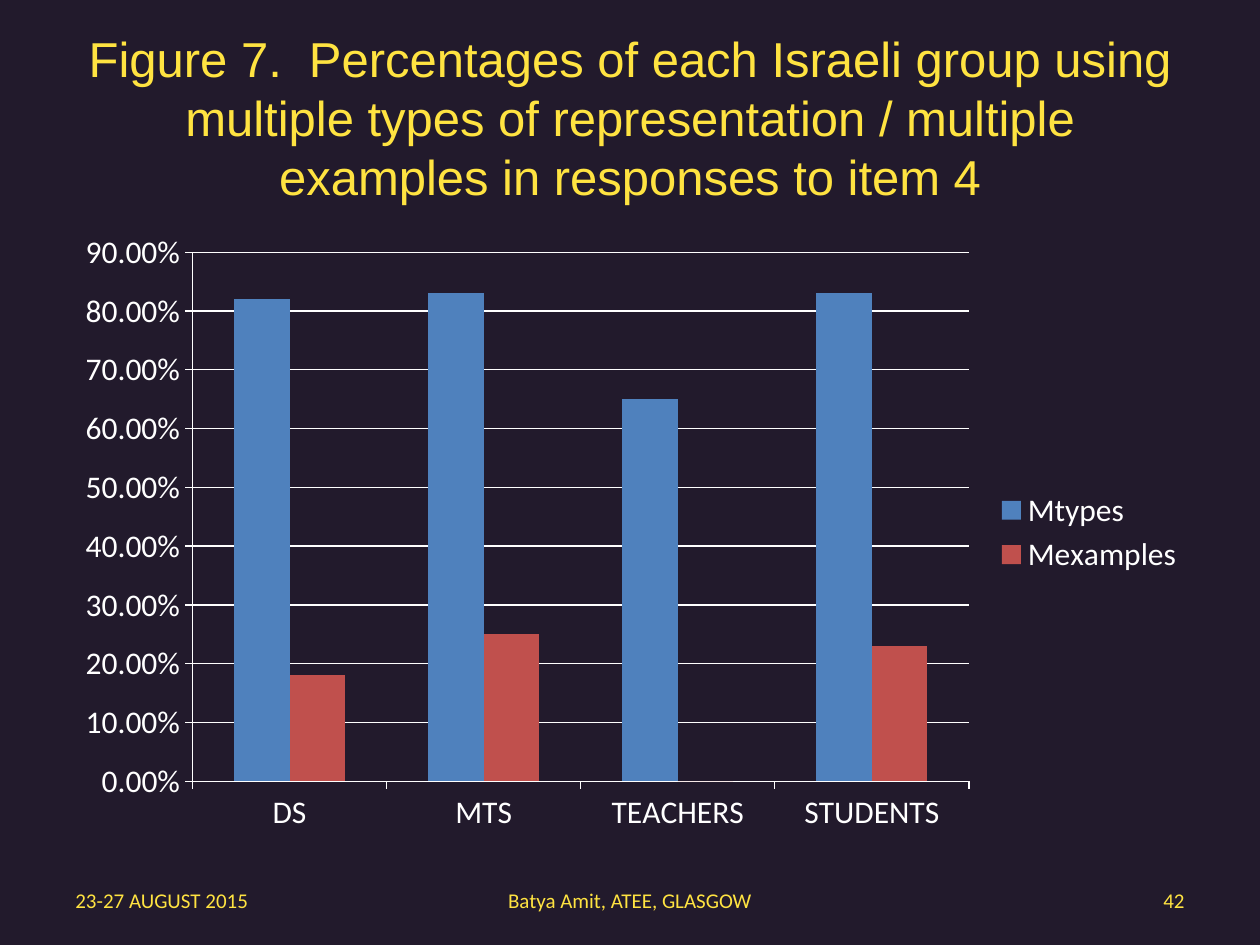
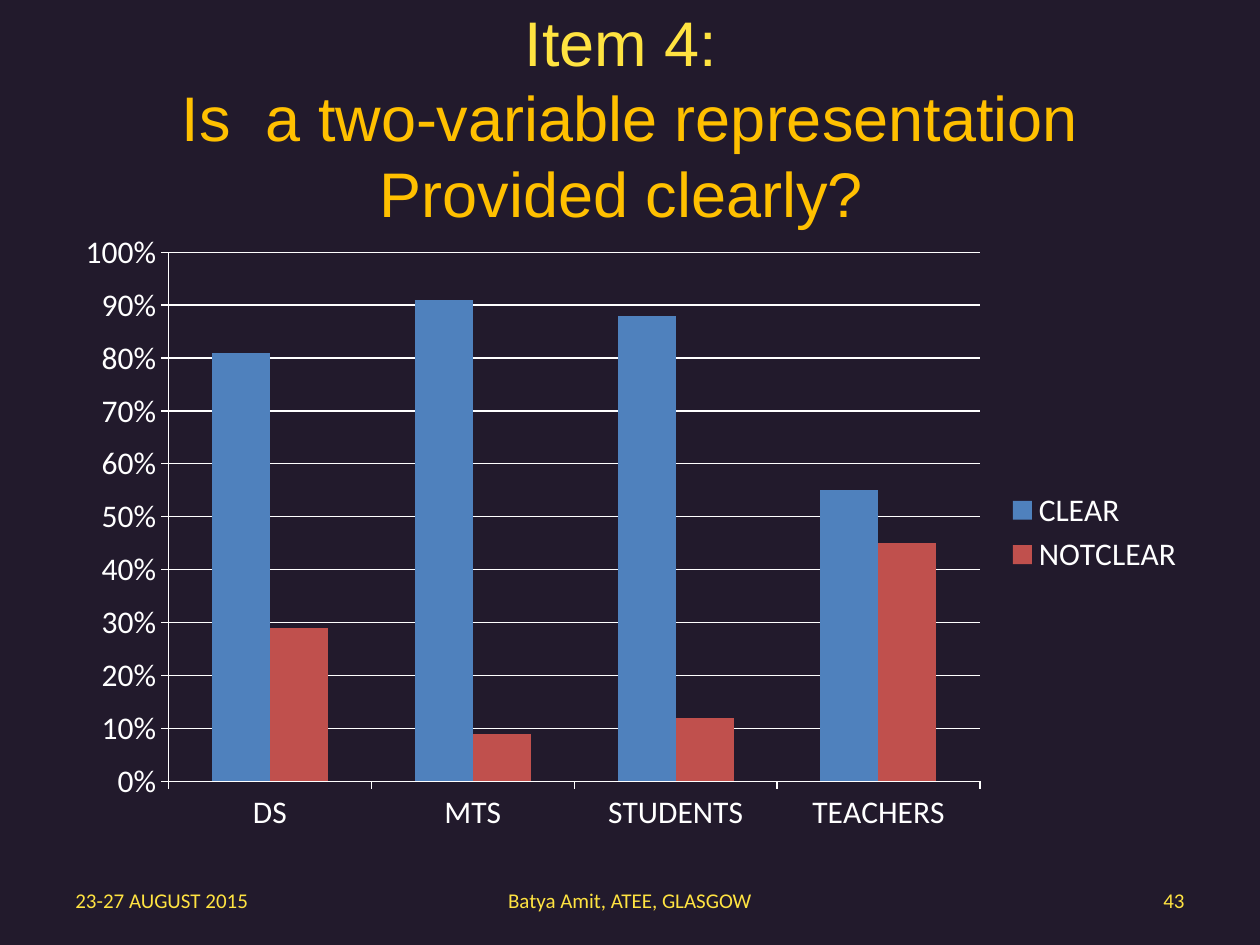
from dataclasses import dataclass

from pptx import Presentation
from pptx.chart.data import CategoryChartData
from pptx.dml.color import RGBColor
from pptx.enum.chart import XL_CHART_TYPE, XL_LEGEND_POSITION, XL_TICK_MARK
from pptx.enum.text import MSO_ANCHOR, MSO_AUTO_SIZE, PP_ALIGN
from pptx.util import Cm, Pt

LEFT, CENTER, RIGHT = PP_ALIGN.LEFT, PP_ALIGN.CENTER, PP_ALIGN.RIGHT
MIDDLE = MSO_ANCHOR.MIDDLE
NO_AUTOFIT = MSO_AUTO_SIZE.NONE
COLUMNS = XL_CHART_TYPE.COLUMN_CLUSTERED
LEGEND_RIGHT = XL_LEGEND_POSITION.RIGHT
TICK_OUTSIDE = XL_TICK_MARK.OUTSIDE
TICK_NONE = XL_TICK_MARK.NONE


@dataclass(frozen=True)
class Theme:
    background: str = "221A2C"
    yellow: str = "FFE341"
    amber: str = "FFC000"
    chart_text: str = "FFFFFF"
    series: tuple = ("4F81BD", "C0504D")
    title_font: str = "Arial"
    body_font: str = "Calibri"
    chart_size: int = 18
    footer_size: int = 12


THEME = Theme()

SLIDES = [
    {
        "number": 42,
        "title_size": 28,
        "title": [
            ("Figure 7.  Percentages of each Israeli group using multiple types of "
             "representation / multiple examples in responses to item 4", THEME.yellow),
        ],
        "categories": ["DS", "MTS", "TEACHERS", "STUDENTS"],
        "series": {"Mtypes": [0.82, 0.83, 0.65, 0.83],
                   "Mexamples": [0.18, 0.25, 0, 0.23]},
        "number_format": "0.00%",
        "axis_maximum": 0.9,
    },
    {
        "number": 43,
        "title_size": 36,
        "title": [
            ("Item 4: \v", THEME.yellow),
            ("Is  a two-variable representation Provided clearly? ", THEME.amber),
        ],
        "categories": ["DS", "MTS", "STUDENTS", "TEACHERS"],
        "series": {"CLEAR": [0.81, 0.91, 0.88, 0.55],
                   "NOTCLEAR": [0.29, 0.09, 0.12, 0.45]},
        "number_format": "0%",
        "axis_maximum": 1,
    },
]
FOOTER_DATE = "23-27 AUGUST 2015"
FOOTER_EVENT = "Batya Amit, ATEE, GLASGOW"

PAGE_WIDTH, PAGE_HEIGHT = Cm(25.4), Cm(19.05)
MARGIN = Cm(1.27)
CONTENT_WIDTH = PAGE_WIDTH - 2 * MARGIN
TITLE_TOP, TITLE_HEIGHT = Cm(0.76), Cm(3.18)
CHART_TOP, CHART_HEIGHT = Cm(4.45), Cm(12.57)
FOOTER_TOP, FOOTER_HEIGHT = Cm(17.65), Cm(1.01)
SIDE_WIDTH, EVENT_WIDTH = Cm(5.93), Cm(8.04)


def color(value):
    return RGBColor.from_string(value)


def set_font(font, name, size, value):
    font.name = name
    font.size = Pt(size)
    font.color.rgb = color(value)


def write(box, spans, *, font, size, align):
    """Fill a box with one paragraph of (text, colour) spans; \\v breaks a line."""
    frame = box.text_frame
    frame.word_wrap = True
    frame.auto_size = NO_AUTOFIT
    frame.vertical_anchor = MIDDLE
    para = frame.paragraphs[0]
    para.alignment = align
    for text, value in spans:
        span = para.add_run()
        span.text = text.rstrip("\v")
        set_font(span.font, font, size, value)
        if text.endswith("\v"):
            para.add_line_break()


def add_title(page, content):
    title = page.shapes.title
    title.left, title.top = MARGIN, TITLE_TOP
    title.width, title.height = CONTENT_WIDTH, TITLE_HEIGHT
    write(title, content["title"], font=THEME.title_font,
          size=content["title_size"], align=CENTER)


def add_footer(page, number):
    cells = [
        (FOOTER_DATE, MARGIN, SIDE_WIDTH, LEFT),
        (FOOTER_EVENT, (PAGE_WIDTH - EVENT_WIDTH) // 2, EVENT_WIDTH, CENTER),
        (str(number), PAGE_WIDTH - MARGIN - SIDE_WIDTH, SIDE_WIDTH, RIGHT),
    ]
    for text, left, width, align in cells:
        box = page.shapes.add_textbox(left, FOOTER_TOP, width, FOOTER_HEIGHT)
        write(box, [(text, THEME.yellow)], font=THEME.body_font,
              size=THEME.footer_size, align=align)


def style_line(line):
    line.color.rgb = color(THEME.chart_text)
    line.width = Pt(0.75)


def add_column_chart(page, content):
    data = CategoryChartData(number_format=content["number_format"])
    data.categories = content["categories"]
    for name, values in content["series"].items():
        data.add_series(name, values)
    chart = page.shapes.add_chart(COLUMNS, MARGIN, CHART_TOP, CONTENT_WIDTH,
                                  CHART_HEIGHT, data).chart
    set_font(chart.font, THEME.body_font, THEME.chart_size, THEME.chart_text)
    chart.has_title = False
    chart.has_legend = True
    chart.legend.position = LEGEND_RIGHT
    chart.legend.include_in_layout = False

    plot = chart.plots[0]
    plot.gap_width = 150
    plot.overlap = 0
    plot.vary_by_categories = False
    for series, value in zip(plot.series, THEME.series):
        series.format.fill.solid()
        series.format.fill.fore_color.rgb = color(value)
        series.invert_if_negative = False

    for axis in (chart.category_axis, chart.value_axis):
        axis.major_tick_mark = TICK_OUTSIDE
        axis.minor_tick_mark = TICK_NONE
        style_line(axis.format.line)
    values = chart.value_axis
    values.minimum_scale, values.maximum_scale = 0, content["axis_maximum"]
    values.major_unit = 0.1
    values.has_major_gridlines = True
    style_line(values.major_gridlines.format.line)
    values.tick_labels.number_format = content["number_format"]
    values.tick_labels.number_format_is_linked = False


def main():
    deck = Presentation()
    deck.slide_width, deck.slide_height = PAGE_WIDTH, PAGE_HEIGHT
    background = deck.slide_master.background.fill
    background.solid()
    background.fore_color.rgb = color(THEME.background)
    title_only = deck.slide_layouts.get_by_name("Title Only")
    for content in SLIDES:
        page = deck.slides.add_slide(title_only)
        add_title(page, content)
        add_column_chart(page, content)
        add_footer(page, content["number"])
    deck.save("out.pptx")


if __name__ == "__main__":
    main()
